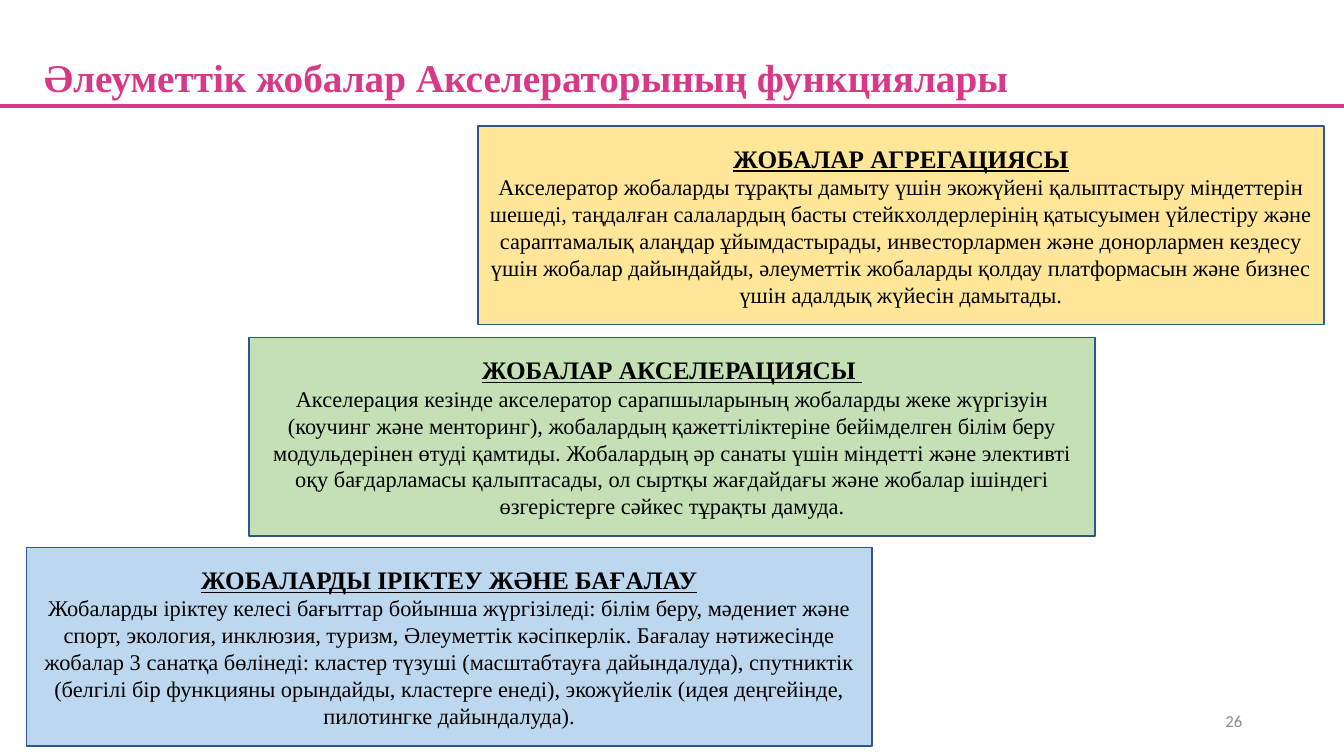
import pptx
import pptx.dml.color
import pptx.enum.shapes
import pptx.enum.text
import pptx.oxml.ns
import pptx.util
from dataclasses import dataclass
from lxml import etree
from pptx.util import Inches

ALIGN = pptx.enum.text.PP_ALIGN
MIDDLE = pptx.enum.text.MSO_ANCHOR.MIDDLE


@dataclass(frozen=True)
class Theme:
    serif: str = "Times New Roman"
    sans: str = "Calibri"
    accent: str = "D93888"
    ink: str = "000000"
    muted: str = "8C8C8C"
    outline: str = "325491"
    blue: str = "BDD7EE"
    green: str = "C5E0B4"
    yellow: str = "FFE699"
    title_size: int = 28
    heading_size: int = 18
    body_size: int = 16
    number_size: int = 12


THEME = Theme()
STEP_SIZE = (8.39, 1.97)

# Steps from bottom to top: left, top, fill, heading, description
STEPS = [
    (0.26, 5.43, THEME.blue, "ЖОБАЛАРДЫ ІРІКТЕУ ЖӘНЕ БАҒАЛАУ",
     "Жобаларды іріктеу келесі бағыттар бойынша жүргізіледі: білім беру, мәдениет және "
     "спорт, экология, инклюзия, туризм, Әлеуметтік кәсіпкерлік. Бағалау нәтижесінде "
     "жобалар 3 санатқа бөлінеді: кластер түзуші (масштабтауға дайындалуда), спутниктік "
     "(белгілі бір функцияны орындайды, кластерге енеді), экожүйелік (идея деңгейінде, "
     "пилотингке дайындалуда)."),
    (2.47, 3.35, THEME.green, "ЖОБАЛАР АКСЕЛЕРАЦИЯСЫ ",
     "Акселерация кезінде акселератор сарапшыларының жобаларды жеке жүргізуін "
     "(коучинг және менторинг), жобалардың қажеттіліктеріне бейімделген білім беру "
     "модульдерінен өтуді қамтиды. Жобалардың әр санаты үшін міндетті және элективті "
     "оқу бағдарламасы қалыптасады, ол сыртқы жағдайдағы және жобалар ішіндегі "
     "өзгерістерге сәйкес тұрақты дамуда."),
    (4.74, 1.25, THEME.yellow, "ЖОБАЛАР АГРЕГАЦИЯСЫ",
     "Акселератор жобаларды тұрақты дамыту үшін экожүйені қалыптастыру міндеттерін "
     "шешеді, таңдалған салалардың басты стейкхолдерлерінің қатысуымен үйлестіру және "
     "сараптамалық алаңдар ұйымдастырады, инвесторлармен және донорлармен кездесу "
     "үшін жобалар дайындайды, әлеуметтік жобаларды қолдау платформасын және бизнес "
     "үшін адалдық жүйесін дамытады."),
]


def rgb(value):
    return pptx.dml.color.RGBColor.from_string(value)


def set_format(target, values):
    for name, value in values.items():
        setattr(target, name, value)


def write(para, text, size, color, font=THEME.serif, layout=None, **style):
    set_format(para, layout or {})
    span = para.add_run()
    span.text = text
    set_format(span.font, {"name": font, "size": pptx.util.Pt(size), **style})
    span.font.color.rgb = rgb(color)


def add_text(page, area, *content, **style):
    box = page.shapes.add_textbox(*map(Inches, area))
    set_format(box.text_frame, {"word_wrap": True, "vertical_anchor": MIDDLE})
    write(box.text_frame.paragraphs[0], *content, **style)


def add_rule(page, y, color, width):
    line = page.shapes.add_connector(
        pptx.enum.shapes.MSO_CONNECTOR.STRAIGHT,
        Inches(0), Inches(y), Inches(13.33), Inches(y))
    line.line.color.rgb = rgb(color)
    line.line.width = pptx.util.Pt(width)
    etree.SubElement(line._element.spPr, pptx.oxml.ns.qn("a:effectLst"))


def add_step(page, left, top, fill, heading, description):
    box = page.shapes.add_shape(
        pptx.enum.shapes.MSO_SHAPE.RECTANGLE,
        *map(Inches, (left, top, *STEP_SIZE)))
    box.shadow.inherit = False
    box.fill.solid()
    box.fill.fore_color.rgb = rgb(fill)
    box.line.color.rgb = rgb(THEME.outline)
    box.line.width = pptx.util.Pt(1)
    frame = box.text_frame
    set_format(frame, {"word_wrap": True, "vertical_anchor": MIDDLE})
    centred = {"alignment": ALIGN.CENTER}
    write(frame.paragraphs[0], heading, THEME.heading_size, THEME.ink,
          layout=centred, bold=True, underline=True)
    write(frame.add_paragraph(), description, THEME.body_size, THEME.ink,
          layout=centred)


def main():
    deck = pptx.Presentation()
    set_format(deck, {"slide_width": Inches(13.33), "slide_height": Inches(7.5)})
    page = deck.slides.add_slide(deck.slide_layouts[6])

    # Slide number
    add_text(page, (9.35, 6.95, 3.07, 0.4), "26", THEME.number_size, THEME.muted,
             font=THEME.sans, layout={"alignment": ALIGN.RIGHT})

    # Staircase of functions
    for step in STEPS:
        add_step(page, *step)

    # Title and rule
    add_text(page, (0.34, 0.44, 12.84, 0.71),
             "Әлеуметтік жобалар Акселераторының функциялары",
             THEME.title_size, THEME.accent, layout={"line_spacing": 0.9}, bold=True)
    add_rule(page, 1.05, THEME.accent, 3)

    deck.save("out.pptx")


if __name__ == "__main__":
    main()
